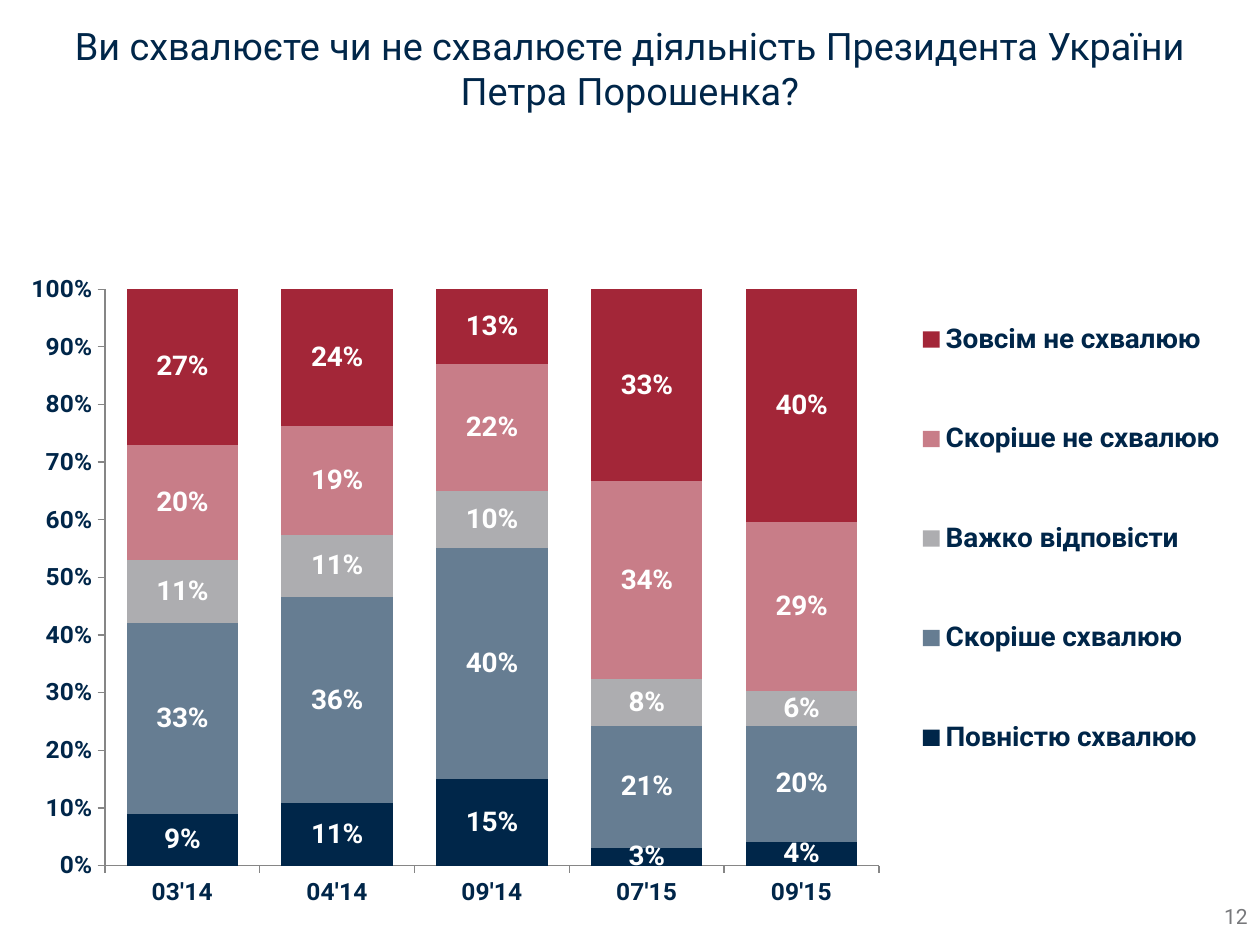
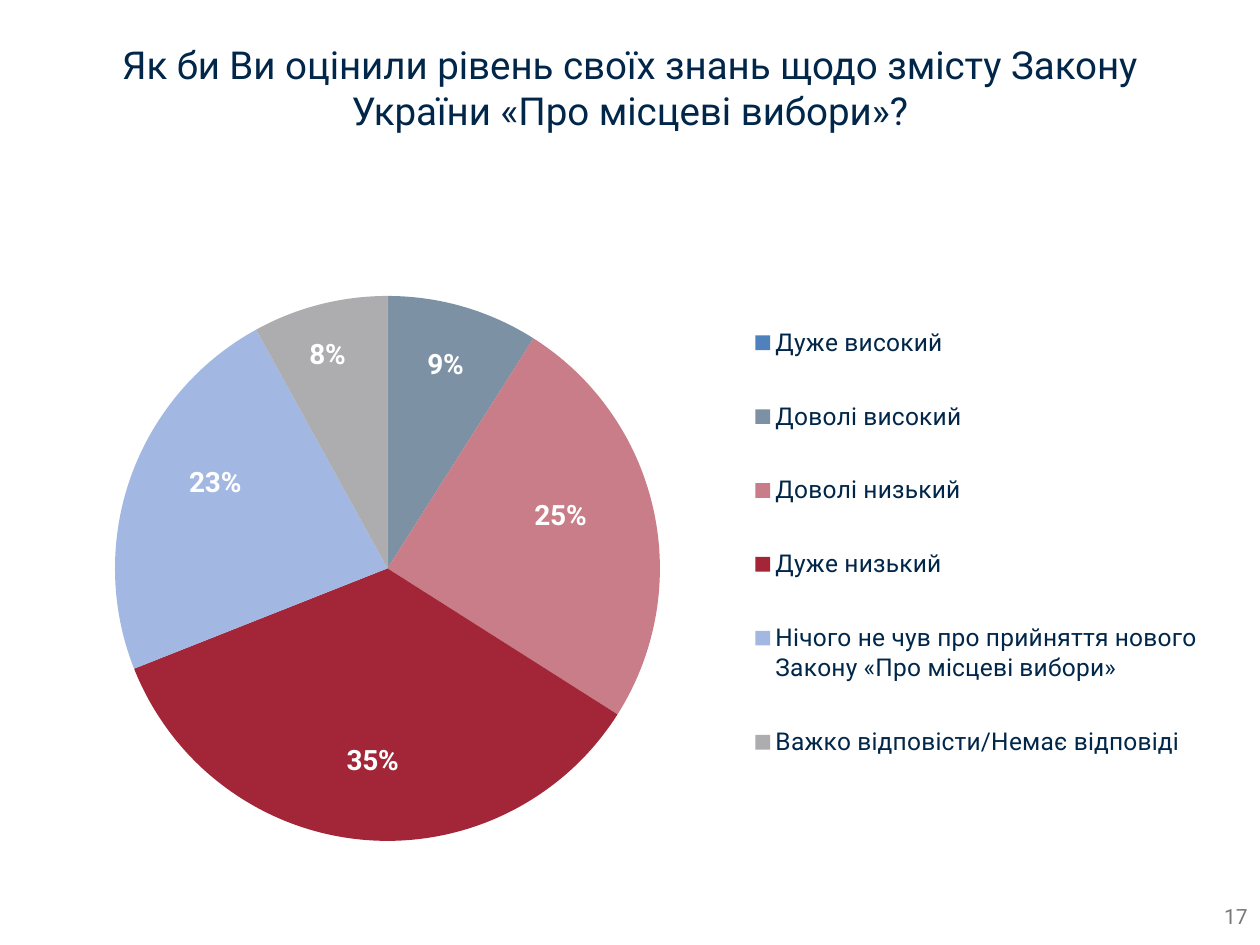
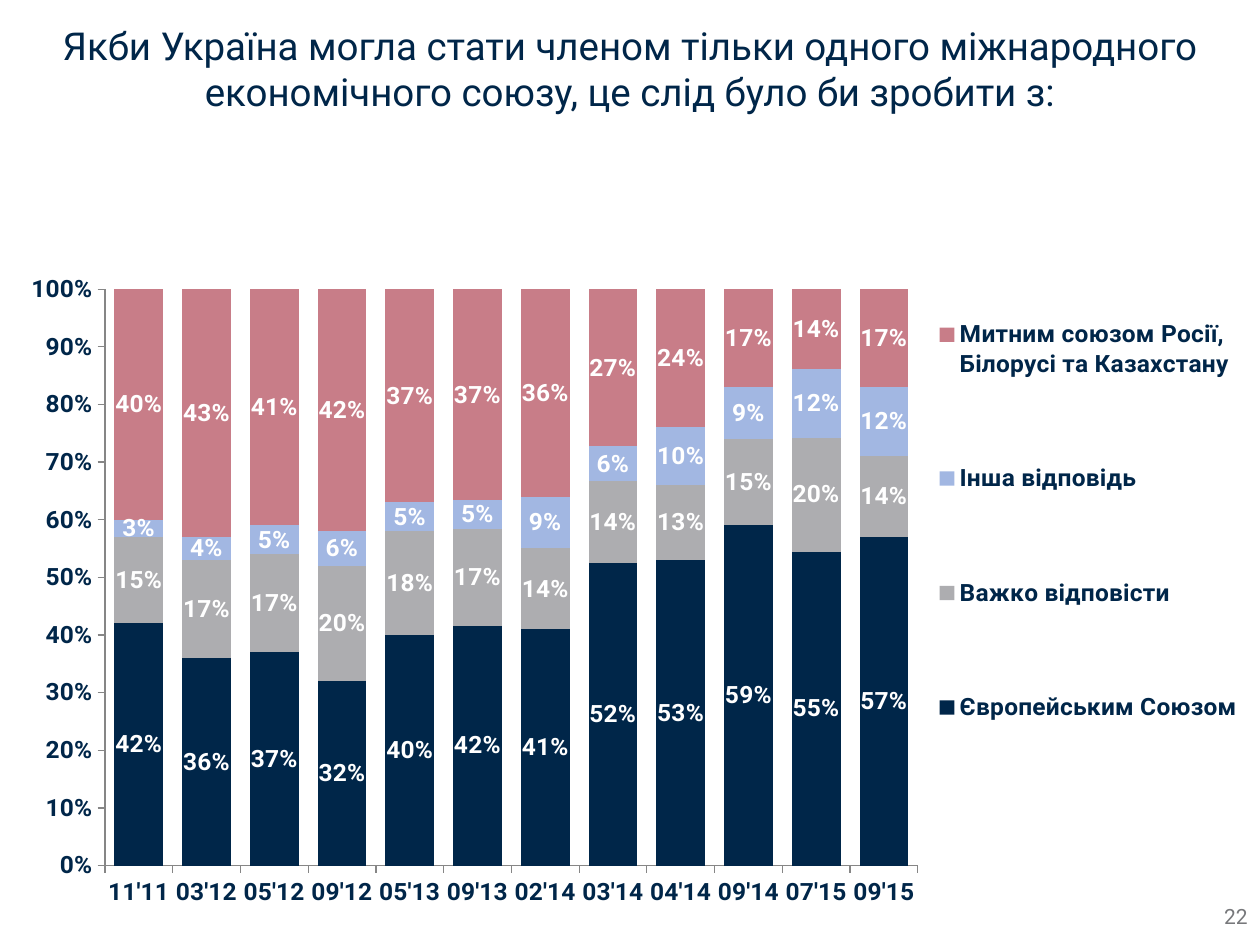
from lxml import etree
from pptx import Presentation
from pptx.chart.data import CategoryChartData
from pptx.dml.color import RGBColor
from pptx.enum.chart import (XL_CHART_TYPE, XL_LABEL_POSITION,
                             XL_LEGEND_POSITION, XL_TICK_MARK)
from pptx.enum.text import MSO_ANCHOR, PP_ALIGN
from pptx.oxml.ns import qn
from pptx.util import Emu, Pt

EMU_PER_PX = 914400 / 126
FONT = "Roboto"
COLORS = {
    "navy": "002649", "slate": "667D92", "steel": "7C91A4", "gray": "ADADB0",
    "rose": "C87D88", "red": "A32638", "sky": "A2B7E2", "blue": "4F81BD",
    "axis": "868686", "number": "77787B", "white": "FFFFFF",
}

# Boxes are left, top, width, height in px
SLIDE_SIZE = (1260, 945)
NUMBER_BOX = (976, 891, 284, 50)
COLUMN_BOX = (0, 98, 1260, 809)
PIE_BOX = (39, 189, 1210, 736)
HIGH_TITLE_BOX = (39, 47, 1182, 42)
LOW_TITLE_BOX = (39, 66, 1182, 42)

APPROVAL = {
    "title": "Ви схвалюєте чи не схвалюєте діяльність Президента України Петра Порошенка?",
    "title_size": 21.6,
    "number": "12",
    "text_size": 16,
    "plot": (105, 197, 774, 594),
    "legend": (912, 162, 318, 584),
    "categories": ["03'14", "04'14", "09'14", "07'15", "09'15"],
    "series": [
        ("Повністю схвалюю", "navy", [9, 11, 15, 3, 4]),
        ("Скоріше схвалюю", "slate", [33, 36, 40, 21, 20]),
        ("Важко відповісти", "gray", [11, 11, 10, 8, 6]),
        ("Скоріше не схвалюю", "rose", [20, 19, 22, 34, 29]),
        ("Зовсім не схвалюю", "red", [27, 24, 13, 33, 40]),
    ],
}
UNION = {
    "title": "Якби Україна могла стати членом тільки одного міжнародного "
             "економічного союзу, це слід було би зробити з:",
    "title_size": 22,
    "number": "22",
    "text_size": 14,
    "plot": (105, 197, 813, 594),
    "legend": (929, 141, 319, 590),
    "categories": ["11'11", "03'12", "05'12", "09'12", "05'13", "09'13",
                   "02'14", "03'14", "04'14", "09'14", "07'15", "09'15"],
    "series": [
        ("Європейським Союзом", "navy",
         [42, 36, 37, 32, 40, 42, 41, 52, 53, 59, 55, 57]),
        ("Важко відповісти", "gray",
         [15, 17, 17, 20, 18, 17, 14, 14, 13, 15, 20, 14]),
        ("Інша відповідь", "sky", [3, 4, 5, 6, 5, 5, 9, 6, 10, 9, 12, 12]),
        ("Митним союзом Росії, Білорусі та Казахстану", "rose",
         [40, 43, 41, 42, 37, 37, 36, 27, 24, 17, 14, 17]),
    ],
}
KNOWLEDGE = {
    "title": "Як би Ви оцінили рівень своїх знань щодо змісту Закону "
             "України «Про місцеві вибори»?",
    "title_size": 22,
    "number": "17",
    "text_size": 14,
    "plot": (76, 107, 545, 545),
    "legend": (706, 95, 463, 517),
    # answer, color, percent, label shift from the slice centre in px
    "slices": [
        ("Дуже високий", "blue", 0, None),
        ("Доволі високий", "steel", 9, (20, -72)),
        ("Доволі низький", "rose", 25, (40, -22)),
        ("Дуже низький", "red", 35, (-2, 57)),
        ("Нічого не чув про прийняття нового Закону «Про місцеві вибори»",
         "sky", 23, (-44, -39)),
        ("Важко вiдповiсти/Немає вiдповiдi", "gray", 8, (-26, -81)),
    ],
}


def px(length):
    return Emu(round(length * EMU_PER_PX))


def rgb(name):
    return RGBColor.from_string(COLORS[name])


def style_font(font, size, color, bold=False):
    font.name = FONT
    font.size = Pt(size)
    font.bold = bold
    font.color.rgb = rgb(color)


def fill_solid(format_, color):
    format_.fill.solid()
    format_.fill.fore_color.rgb = rgb(color)


def add_text(slide, box, text, size, color, alignment):
    text_frame = slide.shapes.add_textbox(*map(px, box)).text_frame
    text_frame.word_wrap = True
    text_frame.vertical_anchor = MSO_ANCHOR.MIDDLE
    text_frame.text = text
    paragraph = text_frame.paragraphs[0]
    paragraph.alignment = alignment
    style_font(paragraph.runs[0].font, size, color)


def add_question_slide(presentation, content, title_box):
    """Slide with the question as title and its page number."""
    slide = presentation.slides.add_slide(presentation.slide_layouts[6])
    add_text(slide, title_box, content["title"], content["title_size"],
             "navy", PP_ALIGN.CENTER)
    add_text(slide, NUMBER_BOX, content["number"], 12, "number", PP_ALIGN.RIGHT)
    return slide


def manual_layout(**settings):
    layout = etree.Element(qn("c:layout"))
    manual = etree.SubElement(layout, qn("c:manualLayout"))
    for name, value in settings.items():
        etree.SubElement(manual, qn("c:" + name)).set("val", str(value))
    return layout


def box_layout(box, chart_box, **target):
    """Layout of a box inside the chart, as fractions of the chart."""
    width, height = chart_box[2:]
    x, y, w, h = (round(length / whole, 4) for length, whole
                  in zip(box, (width, height, width, height)))
    return manual_layout(**target, xMode="edge", yMode="edge", x=x, y=y, w=w, h=h)


def add_question_chart(slide, chart_type, box, content, data, legend_bold):
    """Chart with a placed plot and a legend at the right."""
    chart = slide.shapes.add_chart(chart_type, *map(px, box), data).chart
    chart.has_title = False
    style_font(chart.font, content["text_size"], "navy")
    chart.has_legend = True
    legend = chart.legend
    legend.position = XL_LEGEND_POSITION.RIGHT
    legend.include_in_layout = False
    style_font(legend.font, content["text_size"], "navy", legend_bold)

    plot_area = chart._chartSpace.chart.plotArea
    for parent in (plot_area, legend._element):
        for old_layout in parent.findall(qn("c:layout")):
            parent.remove(old_layout)
    plot_area.insert(0, box_layout(content["plot"], box, layoutTarget="inner"))
    legend._element.find(qn("c:legendPos")).addnext(
        box_layout(content["legend"], box))
    return chart


def style_axis(axis):
    axis.has_major_gridlines = False
    axis.major_tick_mark = XL_TICK_MARK.OUTSIDE
    axis.minor_tick_mark = XL_TICK_MARK.NONE
    axis.format.line.color.rgb = rgb("axis")
    axis.format.line.width = Pt(0.75)
    style_font(axis.tick_labels.font, 14, "navy", True)


def add_column_slide(presentation, content):
    slide = add_question_slide(presentation, content, HIGH_TITLE_BOX)
    data = CategoryChartData(number_format="0%")
    data.categories = content["categories"]
    for name, _, percents in content["series"]:
        data.add_series(name, [percent / 100 for percent in percents])
    chart = add_question_chart(slide, XL_CHART_TYPE.COLUMN_STACKED_100,
                               COLUMN_BOX, content, data, True)

    # Axes
    style_axis(chart.category_axis)
    style_axis(chart.value_axis)
    chart.value_axis.maximum_scale = 1
    chart.value_axis.major_unit = 0.1
    chart.value_axis.tick_labels.number_format = "0%"
    chart.value_axis.tick_labels.number_format_is_linked = False

    # Columns and their labels
    plot = chart.plots[0]
    plot.gap_width = 39
    plot.overlap = 100
    plot.vary_by_categories = False
    for series, (_, color, _) in zip(plot.series, content["series"]):
        fill_solid(series.format, color)
        labels = series.data_labels
        labels.show_value = True
        labels.number_format = "0%"
        labels.number_format_is_linked = False
        labels.position = XL_LABEL_POSITION.CENTER
        style_font(labels.font, 16 if content is APPROVAL else 14, "white", True)


def place_slice_label(point, label, shift):
    """Show the percent at a shift from the slice centre, or nothing."""
    style_font(point.data_label.font, 16, "white", True)
    point.data_label.position = XL_LABEL_POSITION.CENTER
    label = label(point)
    label.find(qn("c:showVal")).set("val", "0")
    if shift is None:
        return
    label.find(qn("c:showPercent")).set("val", "1")
    x, y = (round(length / whole, 4) for length, whole in zip(shift, PIE_BOX[2:]))
    label.find(qn("c:idx")).addnext(manual_layout(x=x, y=y))


def add_pie_slide(presentation, content):
    slide = add_question_slide(presentation, content, LOW_TITLE_BOX)
    data = CategoryChartData(number_format="General")
    data.categories = [answer for answer, *_ in content["slices"]]
    data.add_series("Series 1", [percent for _, _, percent, _ in content["slices"]])
    chart = add_question_chart(slide, XL_CHART_TYPE.PIE, PIE_BOX, content,
                               data, False)

    # Slices and their labels
    plot = chart.plots[0]
    plot.vary_by_categories = True
    series = plot.series[0]
    labels = series.data_labels
    labels.show_percentage = True
    labels.show_value = False
    labels.number_format = "0%"
    labels.number_format_is_linked = False
    style_font(labels.font, 16, "white", True)
    for index, (_, color, _, shift) in enumerate(content["slices"]):
        point = series.points[index]
        fill_solid(point.format, color)
        place_slice_label(
            point, lambda _: labels._element.findall(qn("c:dLbl"))[-1], shift)


def main():
    presentation = Presentation()
    presentation.slide_width, presentation.slide_height = map(px, SLIDE_SIZE)
    add_column_slide(presentation, APPROVAL)
    add_pie_slide(presentation, KNOWLEDGE)
    add_column_slide(presentation, UNION)
    presentation.save("out.pptx")


if __name__ == "__main__":
    main()
